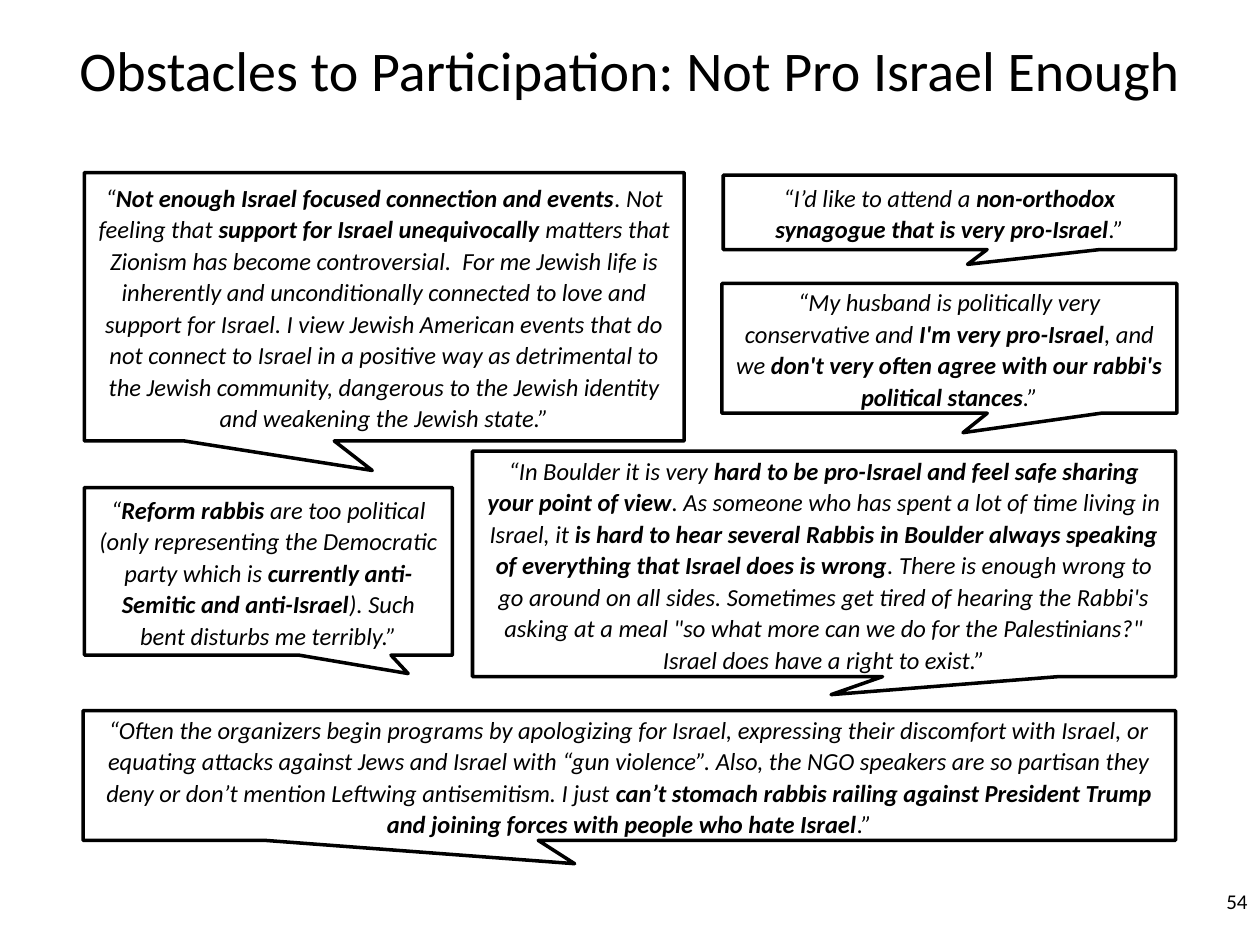
import pptx
import pptx.dml.color
import pptx.enum.shapes
import pptx.enum.text
import pptx.util
from pptx.util import Inches

ALIGN = pptx.enum.text.PP_ALIGN
MIDDLE = pptx.enum.text.MSO_ANCHOR.MIDDLE
CALLOUT = pptx.enum.shapes.MSO_SHAPE.RECTANGULAR_CALLOUT

# Each quote: left, top, width, height, callout tip (x, y), text with **bold** passages
QUOTES = [
    (0.67, 1.37, 4.76, 2.13, (-0.02, 0.61),
     "“**Not enough Israel focused connection and events**. Not feeling that "
     "**support for Israel unequivocally** matters that Zionism has become controversial.  "
     "For me Jewish life is inherently and unconditionally connected to love and support for "
     "Israel. I view Jewish American events that do not connect to Israel in a positive way as "
     "detrimental to the Jewish community, dangerous to the Jewish identity and weakening the "
     "Jewish state.”"),
    (3.75, 3.58, 5.58, 1.79, (0.01, 0.58),
     "“In Boulder it is very **hard to be pro-Israel and feel safe sharing your point of view**. "
     "As someone who has spent a lot of time living in Israel, it **is hard to hear several "
     "Rabbis in Boulder always speaking of everything that Israel does is wrong**. There is "
     "enough wrong to go around on all sides. Sometimes get tired of hearing the Rabbi's asking "
     "at a meal \"so what more can we do for the Palestinians?\" Israel does have a right to "
     "exist.”"),
    (5.74, 1.39, 3.59, 0.59, (0.04, 0.7),
     "“I’d like to attend a **non-orthodox synagogue that is very pro-Israel**.”"),
    (5.73, 2.25, 3.61, 1.03, (0.03, 0.65),
     "“My husband is politically very conservative and **I'm very pro-Israel**, and we "
     "**don't very often agree with our rabbi's political stances**.”"),
    (0.66, 5.64, 8.67, 1.03, (-0.05, 0.68),
     "“Often the organizers begin programs by apologizing for Israel, expressing their "
     "discomfort with Israel, or equating attacks against Jews and Israel with “gun violence”. "
     "Also, the NGO speakers are so partisan they deny or don’t mention Leftwing antisemitism. "
     "I just **can’t stomach rabbis railing against President Trump and joining forces with "
     "people who hate Israel**.”"),
    (0.67, 3.87, 2.92, 1.33, (0.38, 0.61),
     "“**Reform rabbis** are too political (only representing the Democratic party which is "
     "**currently anti-Semitic and anti-Israel**). Such bent disturbs me terribly.”"),
]


def color(hex_value):
    return pptx.dml.color.RGBColor.from_string(hex_value)


def write_text(shape, text, *, size, font, ink, align, italic=False,
               line_spacing=None, space_after=None):
    """Fill the shape with one paragraph; passages between ** are bold."""
    frame = shape.text_frame
    frame.word_wrap = True
    frame.auto_size = pptx.enum.text.MSO_AUTO_SIZE.NONE
    frame.vertical_anchor = MIDDLE
    paragraph = frame.paragraphs[0]
    paragraph.alignment = align
    paragraph.line_spacing = line_spacing
    if space_after is not None:
        paragraph.space_after = pptx.util.Pt(space_after)
    for index, passage in enumerate(text.split("**")):
        run = paragraph.add_run()
        run.text = passage
        run.font.name = font
        run.font.size = pptx.util.Pt(size)
        run.font.bold = index % 2 == 1
        run.font.italic = italic
        run.font.color.rgb = color(ink)


class QuoteSlide:
    font = "Calibri"
    ink = "000000"

    def __init__(self, presentation):
        title_only = presentation.slide_layouts[5]
        self.slide = presentation.slides.add_slide(title_only)

    def title(self, text, left, top, width, height):
        shape = self.slide.shapes.title
        shape.left, shape.top = Inches(left), Inches(top)
        shape.width, shape.height = Inches(width), Inches(height)
        write_text(shape, text, size=32, font=self.font, ink=self.ink, align=ALIGN.CENTER)

    def page_number(self, text, left, top, width, height):
        shape = self.slide.shapes.add_textbox(
            Inches(left), Inches(top), Inches(width), Inches(height))
        write_text(shape, text, size=12, font=self.font, ink=self.ink, align=ALIGN.RIGHT)

    def quote(self, left, top, width, height, tip, text):
        shape = self.slide.shapes.add_shape(
            CALLOUT, Inches(left), Inches(top), Inches(width), Inches(height))
        shape.adjustments[0], shape.adjustments[1] = tip
        shape.shadow.inherit = False
        shape.fill.background()
        shape.line.color.rgb = color(self.ink)
        shape.line.width = pptx.util.Pt(2)
        write_text(shape, text, size=14, font=self.font, ink=self.ink, align=ALIGN.CENTER,
                   italic=True, line_spacing=1.07, space_after=8)


def main():
    presentation = pptx.Presentation()
    presentation.slide_width = Inches(10)
    presentation.slide_height = Inches(7.5)
    slide = QuoteSlide(presentation)
    slide.title("Obstacles to Participation: Not Pro Israel Enough", 0.46, 0.25, 9.08, 0.59)
    for quote in QUOTES:
        slide.quote(*quote)
    slide.page_number("54", 7.67, 6.95, 2.33, 0.4)
    presentation.save("out.pptx")


if __name__ == "__main__":
    main()
